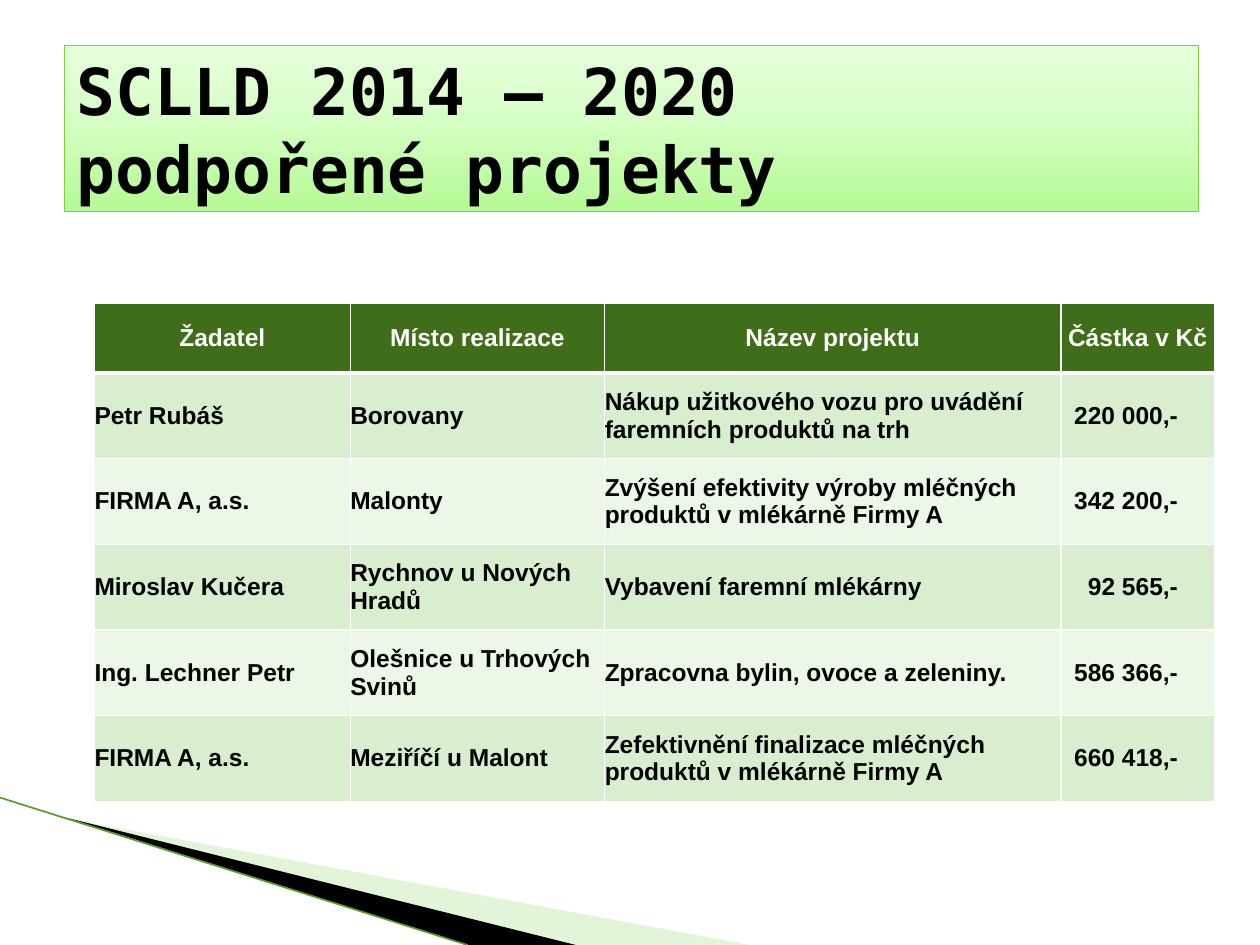
"""Build a slide with a table of supported projects."""
from copy import deepcopy

from lxml.etree import SubElement
from pptx import Presentation
from pptx.dml.color import RGBColor
from pptx.enum.shapes import MSO_CONNECTOR
from pptx.enum.text import MSO_ANCHOR, MSO_AUTO_SIZE, PP_ALIGN
from pptx.oxml.ns import qn
from pptx.util import Inches, Pt

COLORS = {
    "black": "000000",
    "white": "FFFFFF",
    "header": "3F6D19",
    "odd_row": "D8EECE",
    "even_row": "ECF7E8",
    "title_border": "7FD13B",
    "wedge": "B8E7A1",
    "edge": "5A9A2B",
}
TITLE_GRADIENT = [(0, "B5FA95"), (0.65, "DBFFCC"), (1, "E5FFDB")]
WEDGES = [
    ("wedge", 40, [(0.55, 6.5), (5.95, 7.5), (4.56, 7.5)]),
    ("black", 100, [(0.53, 6.49), (4.57, 7.5), (3.72, 7.5)]),
]
COLUMN_WIDTHS = [2.03, 2.02, 3.62, 1.22]
ROW_HEIGHTS = [0.55] + [0.68] * 5
ROWS = [
    ("Žadatel", "Místo realizace", "Název projektu", "Částka v Kč"),
    ("Petr Rubáš", "Borovany",
     "Nákup užitkového vozu pro uvádění faremních produktů na trh", "220 000,-"),
    ("FIRMA A, a.s.", "Malonty",
     "Zvýšení efektivity výroby mléčných produktů v mlékárně Firmy A", "342 200,-"),
    ("Miroslav Kučera", "Rychnov u Nových Hradů",
     "Vybavení faremní mlékárny", "92 565,-"),
    ("Ing. Lechner Petr", "Olešnice u Trhových Svinů",
     "Zpracovna bylin, ovoce a zeleniny.", "586 366,-"),
    ("FIRMA A, a.s.", "Meziříčí u Malont",
     "Zefektivnění finalizace mléčných produktů v mlékárně Firmy A", "660 418,-"),
]


def rgb(name):
    return RGBColor.from_string(COLORS[name])


def add_border(cell, side, points):
    line = SubElement(cell._tc.get_or_add_tcPr(), qn(f"a:ln{side}"), w=str(Pt(points)))
    SubElement(SubElement(line, qn("a:solidFill")), qn("a:srgbClr"), val=COLORS["white"])


presentation = Presentation()
presentation.slide_width, presentation.slide_height = Inches(10), Inches(7.5)
slide = presentation.slides.add_slide(presentation.slide_layouts[5])

for color, opacity, points in WEDGES:
    corners = [(Inches(x), Inches(y)) for x, y in points]
    builder = slide.shapes.build_freeform(*corners[0])
    builder.add_line_segments(corners[1:], close=True)
    wedge = builder.convert_to_shape()
    wedge.shadow.inherit = False
    wedge.fill.solid()
    wedge.fill.fore_color.rgb = rgb(color)
    wedge.line.fill.background()
    if opacity < 100:
        fill_color = wedge._element.spPr.find(f".//{qn('a:srgbClr')}")
        SubElement(fill_color, qn("a:alpha"), val=str(opacity * 1000))

edge = slide.shapes.add_connector(
    MSO_CONNECTOR.STRAIGHT, Inches(0), Inches(6.33), Inches(3.71), Inches(7.5))
edge.line.color.rgb = rgb("edge")
edge.line.width = Pt(0.95)
SubElement(edge._element.spPr, qn("a:effectLst"))

table = slide.shapes.add_table(
    len(ROWS), len(COLUMN_WIDTHS), Inches(0.75), Inches(2.41),
    Inches(sum(COLUMN_WIDTHS)), Inches(sum(ROW_HEIGHTS))).table
for column, width in zip(table.columns, COLUMN_WIDTHS):
    column.width = Inches(width)

for row_index, texts in enumerate(ROWS):
    table.rows[row_index].height = Inches(ROW_HEIGHTS[row_index])
    is_header = row_index == 0
    fill_name = "header" if is_header else "odd_row" if row_index % 2 else "even_row"
    for column_index, text in enumerate(texts):
        is_amount = column_index == 3 and not is_header
        cell = table.cell(row_index, column_index)
        cell.margin_left = cell.margin_top = cell.margin_bottom = 0
        cell.margin_right = Inches(0.29 if is_amount else 0)
        cell.vertical_anchor = MSO_ANCHOR.MIDDLE
        add_border(cell, "L", 1)
        add_border(cell, "R", 1)
        add_border(cell, "T", 3 if row_index == 1 else 1)
        add_border(cell, "B", 3 if is_header else 1)
        cell.fill.solid()
        cell.fill.fore_color.rgb = rgb(fill_name)
        cell.text_frame.text = text
        paragraph = cell.text_frame.paragraphs[0]
        paragraph.alignment = (PP_ALIGN.CENTER if is_header
                               else PP_ALIGN.RIGHT if is_amount else PP_ALIGN.LEFT)
        font = paragraph.runs[0].font
        font.name, font.size, font.bold = "Arial", Pt(14), True
        font.color.rgb = rgb("white" if is_header else "black")

title = slide.shapes.title
title.left, title.top = Inches(0.51), Inches(0.36)
title.width, title.height = Inches(9), Inches(1.32)
title.fill.gradient()
title.fill.gradient_angle = 90
first_stop = title._element.spPr.find(f".//{qn('a:gs')}")
first_stop.addnext(deepcopy(first_stop))
for stop, (position, color) in zip(title.fill.gradient_stops, TITLE_GRADIENT):
    stop.position = position
    stop.color.rgb = RGBColor.from_string(color)
title.line.color.rgb = rgb("title_border")
title.line.width = Pt(0.75)
title_frame = title.text_frame
title_frame.text = "SCLLD 2014 – 2020\vpodpořené projekty"
title_frame.word_wrap = True
title_frame.auto_size = MSO_AUTO_SIZE.NONE
title_frame.vertical_anchor = MSO_ANCHOR.MIDDLE
title_frame.paragraphs[0].alignment = PP_ALIGN.LEFT
for run in title_frame.paragraphs[0].runs:
    run.font.name, run.font.size, run.font.bold = "DejaVu Sans Mono", Pt(36.9), True
    run.font.color.rgb = rgb("black")

presentation.save("out.pptx")
